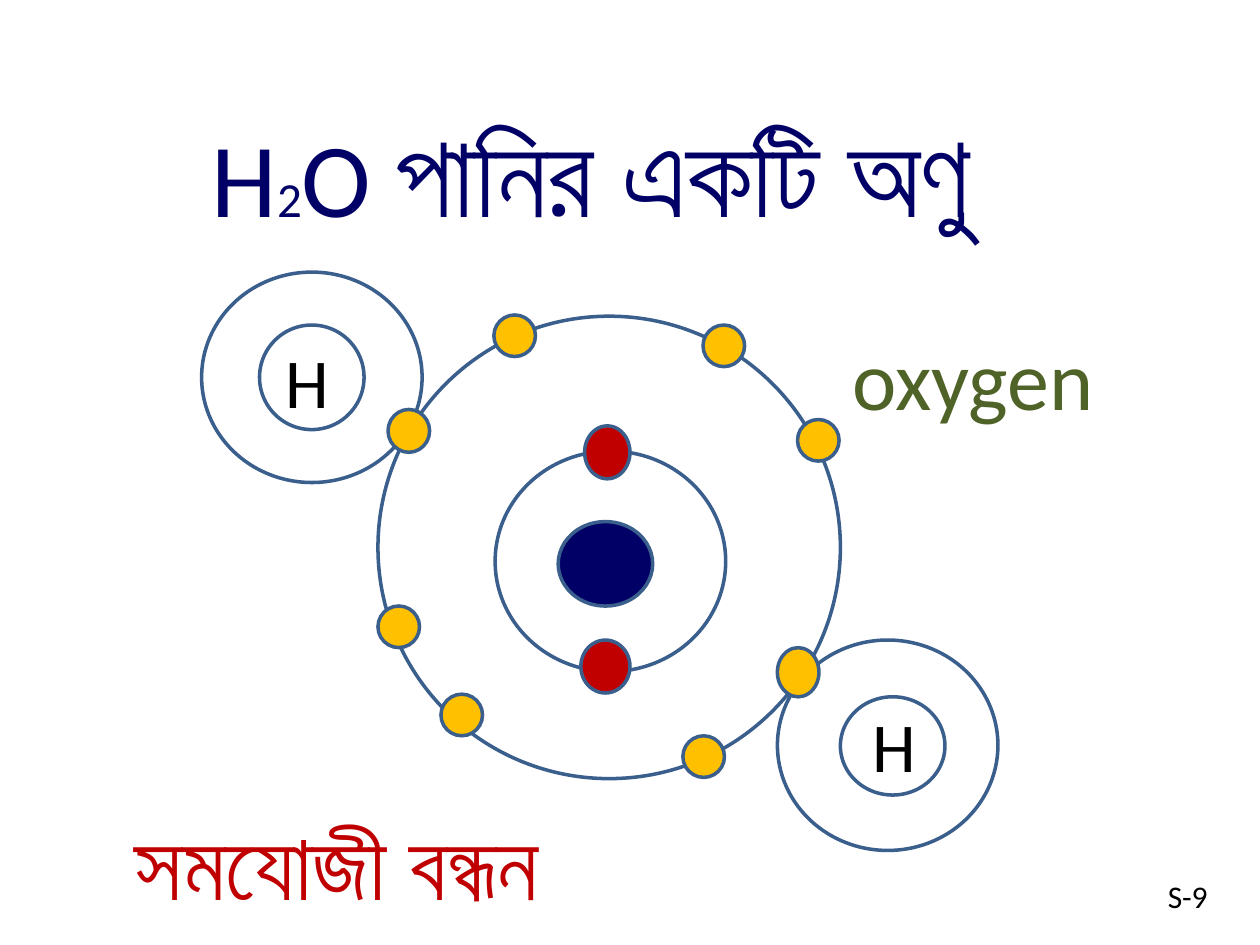
from typing import NamedTuple

from pptx import Presentation
from pptx import util as u
from pptx.dml.color import RGBColor
from pptx.enum import shapes, text

COLORS = {
    "white": "FFFFFF", "outline": "3A5F8C", "navy": "000066", "red": "C00000",
    "gold": "FFC000", "green": "4F6228", "black": "000000",
}
FRAME_FORMAT = {
    "word_wrap": True,
    "auto_size": text.MSO_AUTO_SIZE.NONE,
    "vertical_anchor": text.MSO_ANCHOR.TOP,
}


class Circle(NamedTuple):
    left: float
    top: float
    width: float
    height: float
    color: str = "white"


class Span(NamedTuple):
    words: str
    size: int
    color: str
    font: str = "Calibri"


class Label(NamedTuple):
    left: float
    top: float
    width: float
    height: float
    span: Span


def color(name: str) -> RGBColor:
    return RGBColor.from_string(COLORS[name])


def place(part) -> list:
    return [u.Inches(length) for length in part[:4]]


def draw_circle(page, circle: Circle) -> None:
    oval = page.shapes.add_shape(shapes.MSO_SHAPE.OVAL, *place(circle))
    oval.shadow.inherit = False
    oval.fill.solid()
    oval.fill.fore_color.rgb = color(circle.color)
    oval.line.color.rgb = color("outline")
    oval.line.width = u.Pt(2)


def write(box, spans: list[Span]) -> None:
    for name, value in FRAME_FORMAT.items():
        setattr(box.text_frame, name, value)
    para = box.text_frame.paragraphs[0]
    para.alignment = text.PP_ALIGN.LEFT
    for span in spans:
        run = para.add_run()
        run.text = span.words
        font_format = {"name": span.font, "size": u.Pt(span.size)}
        for name, value in font_format.items():
            setattr(run.font, name, value)
        run.font.color.rgb = color(span.color)


def draw_label(page, label: Label) -> None:
    write(page.shapes.add_textbox(*place(label)), [label.span])


def electron(left: float, top: float, height: float = 0.33) -> Circle:
    return Circle(left, top, 0.33, height, "gold")


# Oxygen: outer shell, inner shell, nucleus, inner electrons
OXYGEN = [
    Circle(3, 2.51, 3.67, 3.67),
    Circle(3.93, 3.58, 1.83, 1.75),
    Circle(4.43, 4.14, 0.75, 0.67, "navy"),
    Circle(4.64, 3.38, 0.36, 0.42, "red"),
    Circle(4.61, 5.08, 0.39, 0.42, "red"),
]
OUTER_ELECTRONS = [
    electron(left, top)
    for left, top in [(3.92, 2.5), (5.58, 2.58), (6.33, 3.33),
                      (3, 4.81), (3.5, 5.51), (5.42, 5.84)]
]
# Hydrogen shells, with shared electrons and nuclei in front
HYDROGEN_SHELLS = [Circle(6.17, 5.08, 1.75, 1.67), Circle(1.6, 2.16, 1.75, 1.67)]
SHARED_ELECTRONS = [electron(3.08, 3.25, 0.34), electron(6.17, 5.14, 0.39)]
HYDROGEN_NUCLEI = [Circle(2.06, 2.58, 0.83, 0.83), Circle(6.67, 5.53, 0.83, 0.78)]

HYDROGEN = Span("H", 40, "black")
LABELS = [
    Label(6.67, 2.54, 2.5, 0.91, Span("oxygen", 48, "green")),
    Label(2.17, 2.64, 0.83, 0.77, HYDROGEN),
    Label(6.83, 5.53, 0.83, 0.77, HYDROGEN),
    Label(9.17, 6.91, 0.83, 0.4, Span("S-9", 18, "black")),
    Label(0.97, 6.35, 3.61, 1.01, Span("সমযোজী বন্ধন", 54, "red", "Lato")),
]
TITLE = [
    Span("H", 60, "navy"),
    Span("2", 28, "navy"),
    Span("O ", 60, "navy"),
    Span("পানির একটি অণু", 66, "navy", "Lato"),
]


def main() -> None:
    deck = Presentation()
    deck.slide_width, deck.slide_height = u.Inches(10), u.Inches(7.5)
    page = deck.slides.add_slide(deck.slide_layouts.get_by_name("Title Only"))

    # Title
    title = page.shapes.title
    title.left, title.top, title.width, title.height = place((1.58, 0.76, 6.47, 1.21))
    write(title, TITLE)

    # Molecule, from back to front
    for circle in (OXYGEN + OUTER_ELECTRONS + HYDROGEN_SHELLS
                   + SHARED_ELECTRONS + HYDROGEN_NUCLEI):
        draw_circle(page, circle)

    # Labels
    for label in LABELS:
        draw_label(page, label)

    deck.save("out.pptx")


if __name__ == "__main__":
    main()
